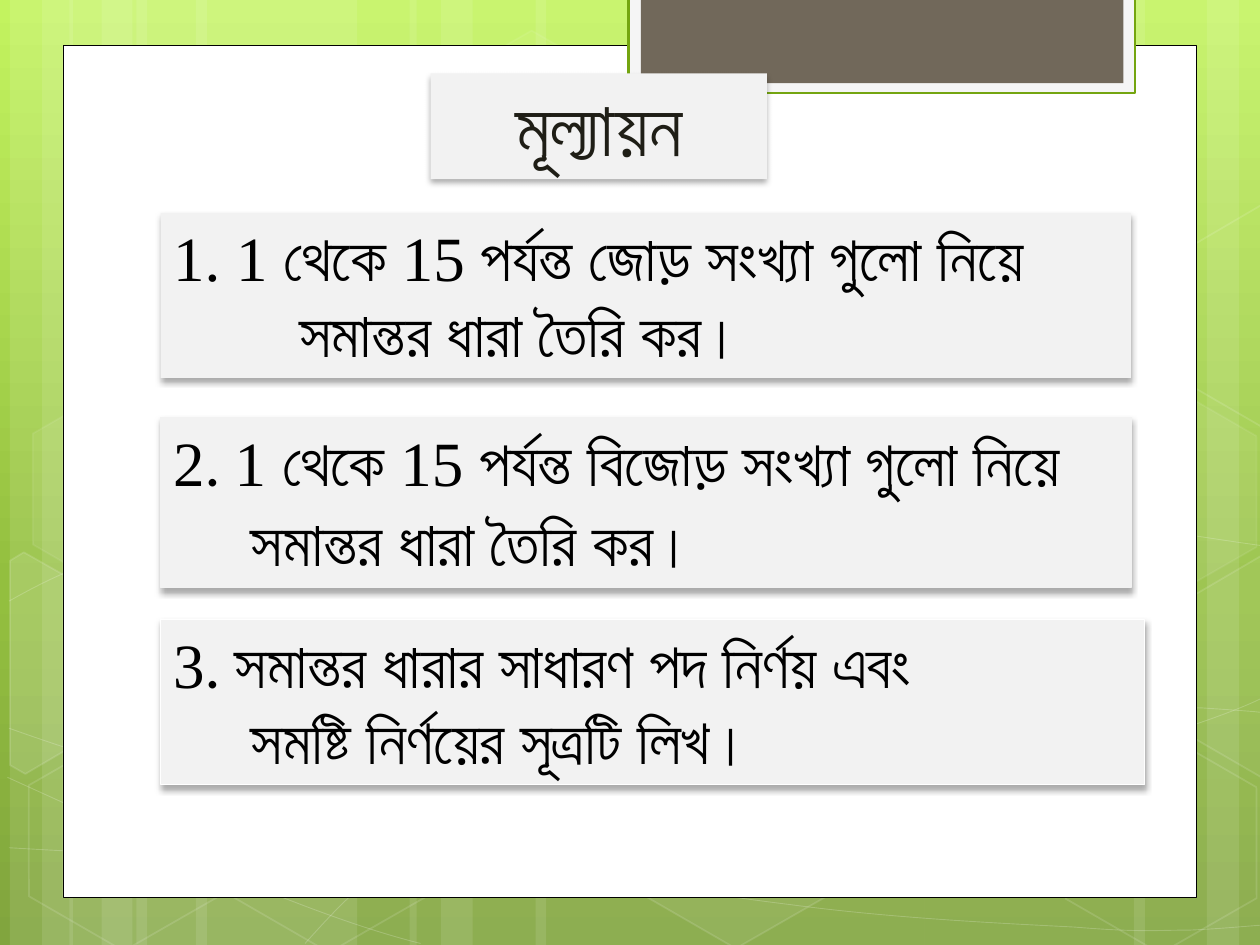
from copy import deepcopy
from math import cos, radians, sin
from lxml.etree import SubElement
from pptx import Presentation
from pptx.dml.color import RGBColor
from pptx.enum.shapes import MSO_SHAPE
from pptx.enum.text import MSO_ANCHOR, MSO_AUTO_SIZE, PP_ALIGN
from pptx.oxml.ns import qn
from pptx.util import Cm, Pt

COLORS = {
    "white": "FFFFFF", "black": "000000", "panel": "F2F2F2", "tab": "F5F5F5",
    "tab line": "74A510", "tab core": "71685A", "title": "1F1E16",
}
GRADIENT = [(0, "C3F35F"), (0.62, "93BF3F"), (1, "81A53E")]
LATIN, BANGLA = "Times New Roman", "Calibri"
NUKTA = chr(0x9BC)
SINGLE_LETTERS = {"য" + NUKTA: chr(0x9DF), "ড" + NUKTA: chr(0x9DC)}
TILT = 30

TITLE = "মূল্যায়ন"
TITLE_BOX = (8.68, 1.48, 6.78, 2.13)
QUESTIONS = [
    {"box": (3.24, 4.29, 19.56, 3.33), "line": None, "indent": 2.54, "before": 0,
     "first": [("1. 1 ", LATIN), ("থেকে ", BANGLA), ("15 ", LATIN),
               ("পর্যন্ত জোড় সংখ্যা গুলো নিয়ে", BANGLA)],
     "second": [("সমান্তর ধারা তৈরি কর।", BANGLA)]},
    {"box": (3.24, 8.42, 19.56, 3.43), "line": "panel", "indent": 1.57, "before": 2.5,
     "first": [("2", LATIN), (". ", BANGLA), ("1 ", LATIN), ("থেকে ", BANGLA),
               ("15 ", LATIN), ("পর্যন্ত বিজোড় সংখ্যা গুলো নিয়ে", BANGLA)],
     "second": [("সমান্তর ধারা তৈরি কর।", BANGLA)]},
    {"box": (3.24, 12.49, 19.84, 3.33), "line": "white", "indent": 1.57, "before": 0,
     "first": [("3", LATIN), (". সমান্তর ধারার সাধারণ পদ নির্ণয় এবং", BANGLA)],
     "second": [("সমষ্টি নির্ণয়ের সূত্রটি লিখ।", BANGLA)]},
]

STRIPES = [
    (2.75, 4.45), (0.2, 1.27), (0.85, 2.12), (3.95, 4.45), (1.4, 1.27), (2.05, 2.12),
    (18.63, 4.45), (24.33, 1.27), (22.86, 2.12), (10.8, 7.83), (8.26, 1.27), (8.89, 2.12),
]
CURVES = [
    [(0.18, 17.09), (1.55, 17.17), (2.92, 17.25), (4.83, 17.22), (6.73, 17.2),
     (9.09, 17.15), (11.63, 16.89), (14.17, 16.64), (17.78, 16.15), (20.12, 15.67),
     (22.43, 15.19), (24.82, 14.43), (25.58, 14)],
    [(0.18, 12.12), (0.91, 11.71), (1.65, 11.33), (3.07, 10.95), (4.52, 10.57),
     (6.58, 10.01), (8.81, 9.83), (11.07, 9.65), (13.82, 9.63), (16.61, 9.83),
     (19.41, 10.03), (24.05, 10.82), (25.58, 11.02)],
    [(0.15, 15.67), (3.23, 17.07), (6.27, 18.47), (8.48, 19.02)],
    [(0.18, 14.68), (0.97, 14.96), (1.78, 15.24), (3.25, 15.65), (4.72, 16.03),
     (6.93, 16.66), (9.07, 17.09), (11.18, 17.53), (13.84, 17.98), (15.95, 18.24),
     (18.06, 18.52), (20.32, 18.62), (21.67, 18.69), (22.99, 18.8), (23.34, 18.75),
     (24, 18.75), (24.66, 18.72), (25.12, 18.67), (25.58, 18.64)],
    [(6.15, 19.02), (6.6, 18.52), (7.06, 18.01), (7.67, 17.55), (8.28, 17.09),
     (9.14, 16.59), (9.86, 16.23), (10.57, 15.88), (11, 15.72), (11.94, 15.47),
     (12.85, 15.22), (14.55, 14.86), (15.44, 14.68), (16.36, 14.5), (16.48, 14.5),
     (17.27, 14.45), (18.06, 14.38), (19.3, 14.3), (20.17, 14.27), (21.06, 14.25),
     (22.5, 14.27), (22.5, 14.27), (23, 14.27), (23.7, 14.27), (24.21, 14.27),
     (24.66, 14.3), (25.1, 14.33), (25.32, 14.35), (25.55, 14.38), (25.48, 14.35),
     (25.55, 14.38)],
]
HEXAGONS = [
    (8.48, 0.91, 4, 8), (12.62, 14.96, 6, 12), (0.28, 15.01, None, 12),
    (0.36, 7.92, 7, 8), (4.42, 15.04, None, 12), (19.13, 11.51, 10, 12),
    (21.18, 15.06, None, 12), (21.18, 7.98, 7, 8),
]
LEFT_CUT = [(0.2, 11.3), (0.48, 11.13), (2.44, 12.24), (2.41, 14.48), (0.51, 15.6), (0.2, 15.42)]
RIGHT_CUT = [(23.52, 12.32), (25.43, 11.2), (25.63, 11.33), (25.63, 15.57),
             (25.45, 15.67), (23.52, 14.55)]
UPPER_CUT = [(x, y - 7.07) for x, y in RIGHT_CUT]
CUT_HEXAGONS = [(LEFT_CUT, (0.91, 13.59), 10), (RIGHT_CUT, (25.02, 13.21), 4),
                (UPPER_CUT, (25.02, 6.14), None)]
FRAME = [
    ((1.27, 0.91, 22.86, 17.19), "white", "black", 0.5),
    ((12.67, -0.05, 10.21, 1.93), "tab", "tab line", 1.25),
    ((12.92, -0.05, 9.73, 1.73), "tab core", None, 0),
]


def paint(fill, color, alpha=100):
    if color is None or alpha is None:
        fill.background()
        return
    fill.solid()
    fill.fore_color.rgb = RGBColor.from_string(COLORS[color])
    if alpha < 100:
        SubElement(fill.fore_color._xFill[0], qn("a:alpha"), val=str(alpha * 1000))


def style(shape, fill, line=None, width=0, fill_alpha=100, line_alpha=100):
    shape.shadow.inherit = False
    paint(shape.fill, fill, fill_alpha)
    paint(shape.line.fill, line, line_alpha)
    if line:
        shape.line.width = Pt(width)


def add_box(slide, kind, box):
    return slide.shapes.add_shape(kind, *map(Cm, box))


def add_outline(slide, points, close):
    (start_x, start_y), *rest = [(Cm(x), Cm(y)) for x, y in points]
    builder = slide.shapes.build_freeform(start_x, start_y)
    builder.add_line_segments(rest, close=close)
    return builder.convert_to_shape()


def add_curve(slide, controls):
    curve = add_outline(slide, controls, False)
    outline = curve.element.find(".//" + qn("a:path"))
    segments = outline.findall(qn("a:lnTo"))
    for first in range(0, len(segments), 3):
        bezier = SubElement(outline, qn("a:cubicBezTo"))
        for segment in segments[first:first + 3]:
            bezier.append(segment[0])
            outline.remove(segment)
    return curve


def turn_back(point, center):
    x, y = point[0] - center[0], point[1] - center[1]
    angle = radians(TILT)
    return (center[0] + x * cos(angle) + y * sin(angle),
            center[1] - x * sin(angle) + y * cos(angle))


def add_drop_shadow(shape):
    effects = shape.element.spPr.find(qn("a:effectLst"))
    shadow = SubElement(effects, qn("a:outerShdw"), blurRad=str(Pt(3.5)),
                        dist=str(Pt(2.2)), dir="5400000", rotWithShape="0")
    color = SubElement(shadow, qn("a:srgbClr"), val=COLORS["black"])
    SubElement(color, qn("a:alpha"), val="32000")


def add_run(paragraph, text, font, size, color, bold=False):
    for pair, letter in SINGLE_LETTERS.items():
        text = text.replace(pair, letter)
    run = paragraph.add_run()
    run.text = text
    run.font.name, run.font.size, run.font.bold = font, Pt(size), bold
    run.font.color.rgb = RGBColor.from_string(COLORS[color])


def set_background(slide):
    fill = slide.background.fill
    fill.gradient()
    fill.gradient_angle = 270
    stop_list = slide.element.find(".//" + qn("a:gsLst"))
    stop_list.append(deepcopy(stop_list[-1]))
    for stop, (position, color) in zip(fill.gradient_stops, GRADIENT):
        stop.position = position
        stop.color.rgb = RGBColor.from_string(color)


def add_backdrop(slide):
    for left, width in STRIPES:
        style(add_box(slide, MSO_SHAPE.RECTANGLE, (left, 0, width, 19.05)), "white", fill_alpha=10)
    for controls in CURVES:
        style(add_curve(slide, controls), None, "white", 0.5, line_alpha=20)
    for left, top, fill_alpha, line_alpha in HEXAGONS:
        hexagon = add_box(slide, MSO_SHAPE.HEXAGON, (left, top, 4.45, 3.87))
        hexagon.adjustments[0] = 0.29
        hexagon.rotation = TILT
        style(hexagon, "white", "white", 1, fill_alpha, line_alpha)
    for points, center, fill_alpha in CUT_HEXAGONS:
        cut = add_outline(slide, [turn_back(point, center) for point in points], True)
        cut.rotation = TILT
        style(cut, "white", "white", 1, fill_alpha, 12)
    for box, fill, line, width in FRAME:
        style(add_box(slide, MSO_SHAPE.RECTANGLE, box), fill, line, width)


def prepare_panel(shape, line):
    style(shape, "panel", line, 0.75)
    add_drop_shadow(shape)
    frame = shape.text_frame
    frame.word_wrap = True
    frame.auto_size = MSO_AUTO_SIZE.NONE
    frame.vertical_anchor = MSO_ANCHOR.TOP
    return frame


def add_title(slide):
    title = slide.shapes.title
    title.left, title.top, title.width, title.height = map(Cm, TITLE_BOX)
    slide.shapes.element.append(title.element)
    paragraph = prepare_panel(title, None).paragraphs[0]
    paragraph.alignment = PP_ALIGN.CENTER
    add_run(paragraph, TITLE, BANGLA, 44, "title", True)


def add_question(slide, question):
    panel = slide.shapes.add_textbox(*map(Cm, question["box"]))
    frame = prepare_panel(panel, question["line"])
    paragraphs = [frame.paragraphs[0], frame.add_paragraph()]
    for paragraph, key in zip(paragraphs, ("first", "second")):
        paragraph.space_before = Pt(question["before"])
        for text, font in question[key]:
            add_run(paragraph, text, font, 36, "black")
    paragraphs[1]._p.get_or_add_pPr().set("marL", str(Cm(question["indent"])))


def main():
    presentation = Presentation()
    presentation.slide_width, presentation.slide_height = Cm(25.4), Cm(19.05)
    slide = presentation.slides.add_slide(presentation.slide_layouts[5])
    set_background(slide)
    add_backdrop(slide)
    add_title(slide)
    for question in QUESTIONS:
        add_question(slide, question)
    presentation.save("out.pptx")


if __name__ == "__main__":
    main()
